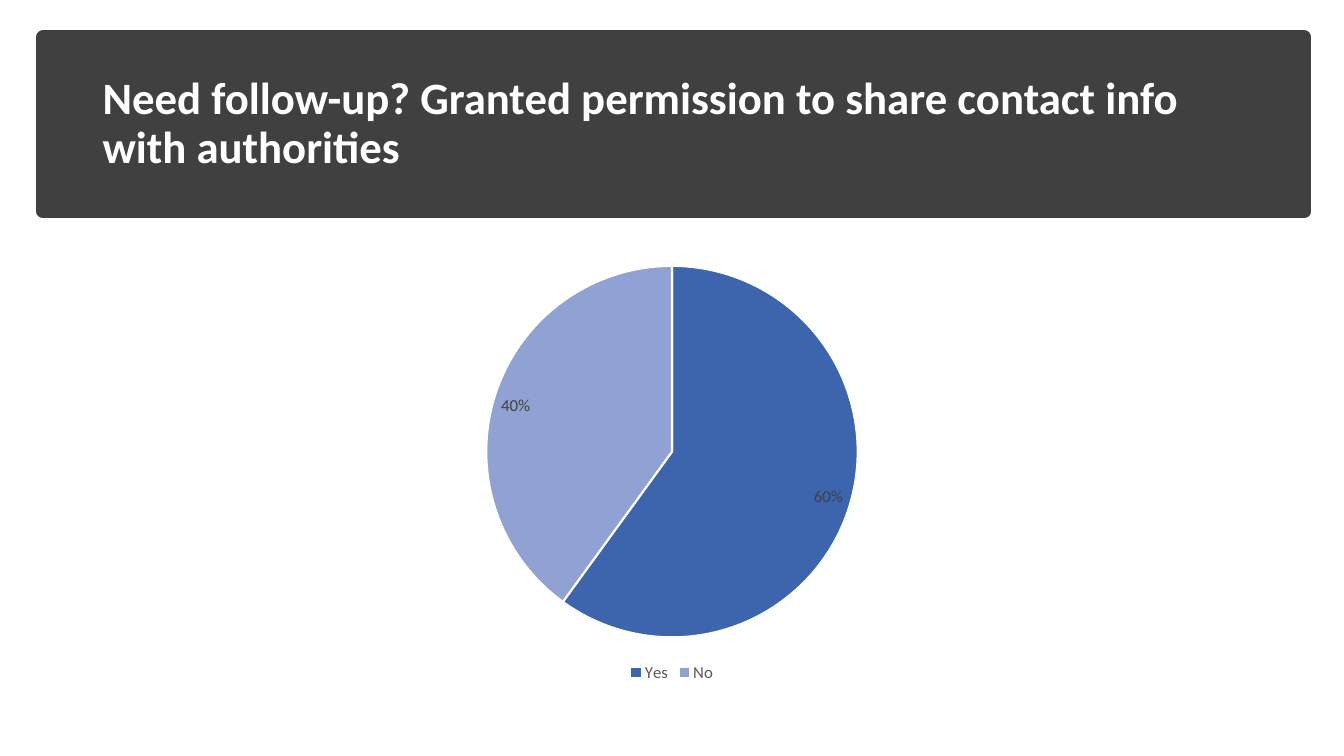
from pptx import Presentation
from pptx.chart.data import CategoryChartData
from pptx.dml.color import RGBColor
from pptx.enum.chart import XL_CHART_TYPE as ChartType
from pptx.enum.chart import XL_LABEL_POSITION as LabelPos
from pptx.enum.chart import XL_LEGEND_POSITION as LegendPos
from pptx.enum.shapes import MSO_SHAPE as Shape
from pptx.enum.text import MSO_ANCHOR as Anchor
from pptx.enum.text import MSO_AUTO_SIZE as AutoSize
from pptx.enum.text import PP_ALIGN as Align
from pptx.util import Cm, Pt


def rgb(value):
    return RGBColor.from_string(value)


class SlideBuilder:
    font = "Calibri"
    dark = "404040"
    white = "FFFFFF"
    grey = "595959"

    def __init__(self, prs):
        self.slide = prs.slides.add_slide(prs.slide_layouts[5])

    def style(self, font, size, color, bold=False):
        font.name = self.font
        font.size = Pt(size)
        font.bold = bold
        font.color.rgb = rgb(color)

    def banner(self, left, top, width, height):
        shapes = self.slide.shapes
        sp = shapes.add_shape(
            Shape.RECTANGLE, Cm(left), Cm(top), Cm(width), Cm(height))
        sp.shadow.inherit = False
        sp.fill.solid()
        sp.fill.fore_color.rgb = rgb(self.dark)
        sp.line.color.rgb = rgb(self.dark)
        sp.line.width = Pt(10)
        shapes.title.element.addprevious(sp.element)

    def title(self, text, left, top, width, height):
        sp = self.slide.shapes.title
        sp.left, sp.top = Cm(left), Cm(top)
        sp.width, sp.height = Cm(width), Cm(height)
        tf = sp.text_frame
        tf.word_wrap = True
        tf.auto_size = AutoSize.NONE
        tf.vertical_anchor = Anchor.MIDDLE
        p = tf.paragraphs[0]
        p.alignment = Align.LEFT
        p.line_spacing = 0.9
        r = p.add_run()
        r.text = text
        self.style(r.font, 32, self.white, bold=True)

    def pie(self, slices, left, top, width, height):
        data = CategoryChartData(number_format="0%")
        data.categories = [name for name, _, _ in slices]
        data.add_series("Series 1", [share for _, share, _ in slices])
        chart = self.slide.shapes.add_chart(
            ChartType.PIE, Cm(left), Cm(top), Cm(width), Cm(height), data).chart
        self.style(chart.font, 10, "000000")
        chart.has_title = False
        chart.has_legend = True
        chart.legend.position = LegendPos.BOTTOM
        chart.legend.include_in_layout = False
        self.style(chart.legend.font, 12, self.grey)

        plot = chart.plots[0]
        plot.vary_by_categories = True
        series = plot.series[0]
        for i, (_, _, color) in enumerate(slices):
            fmt = series.points[i].format
            fmt.fill.solid()
            fmt.fill.fore_color.rgb = rgb(color)
            fmt.line.color.rgb = rgb(self.white)
            fmt.line.width = Pt(1.5)

        labels = series.data_labels
        labels.show_value = True
        labels.number_format = "0%"
        labels.number_format_is_linked = False
        labels.position = LabelPos.INSIDE_END
        self.style(labels.font, 12, self.dark)


def main():
    prs = Presentation()
    prs.slide_width, prs.slide_height = Cm(33.87), Cm(19.05)
    s = SlideBuilder(prs)
    s.banner(1.09, 0.94, 31.78, 4.39)
    s.title("Need follow-up? Granted permission to share contact info "
            "with authorities", 2.33, 1.3, 29.21, 3.68)
    s.pie([("Yes", 0.6, "3C65AE"), ("No", 0.4, "90A2D3")],
          2.33, 6.35, 29.21, 10.95)
    prs.save("out.pptx")


if __name__ == "__main__":
    main()
